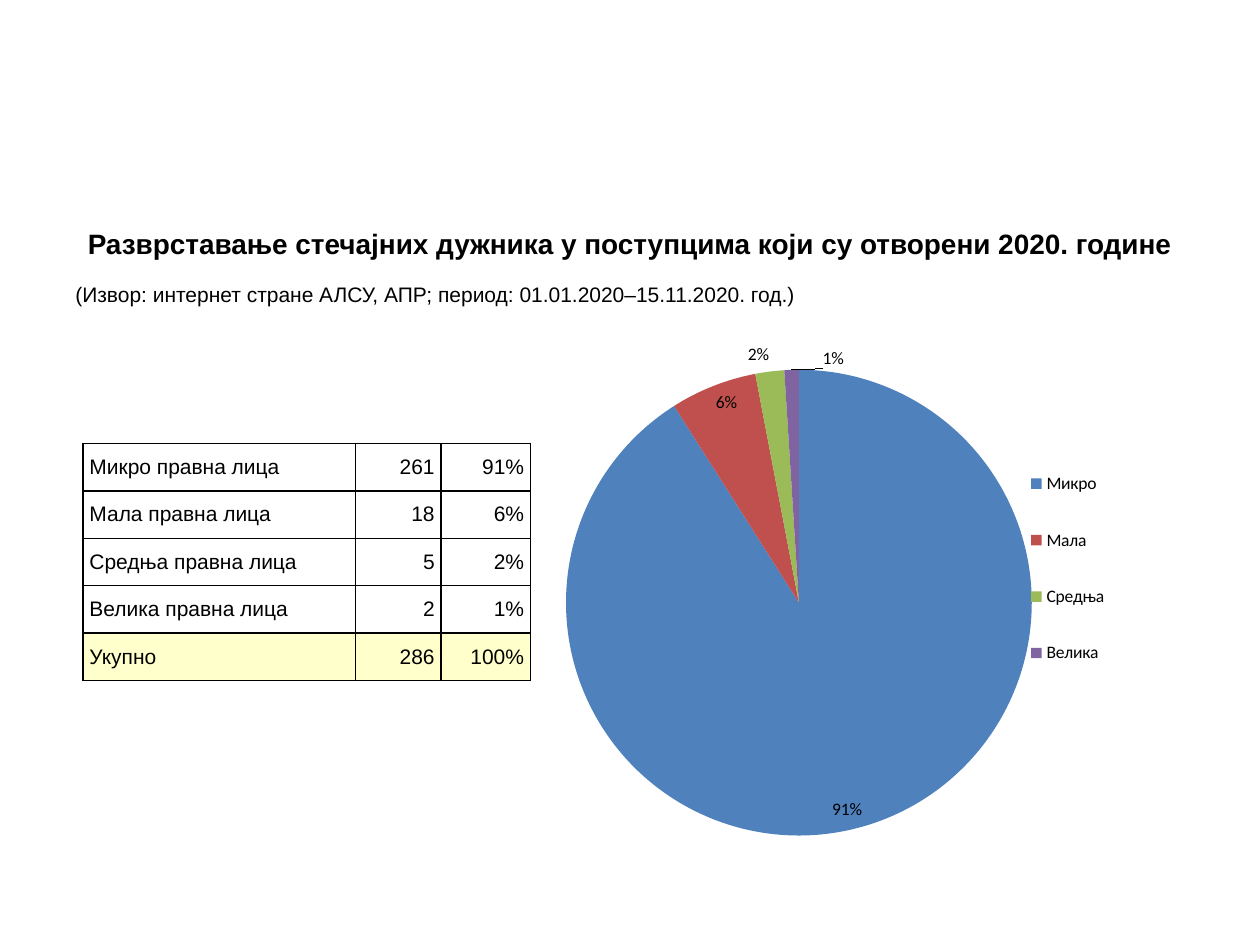
from lxml.etree import SubElement
from pptx import Presentation
from pptx.chart.data import CategoryChartData
from pptx.dml.color import RGBColor
from pptx.enum.chart import XL_CHART_TYPE, XL_LABEL_POSITION, XL_LEGEND_POSITION
from pptx.enum.text import MSO_ANCHOR, PP_ALIGN
from pptx.oxml import parse_xml
from pptx.oxml.ns import nsdecls, qn
from pptx.util import Inches, Pt

COLORS = {
    "ink": "000000", "total": "FFFFCC", "micro": "4F81BD",
    "small": "C0504D", "medium": "9BBB59", "large": "8064A2",
}
COLUMNS, ROWS = 100, 75


def rgb(name):
    return RGBColor.from_string(COLORS[name])


def layout_xml(**values):
    parts = "".join(f'<c:{key} val="{value}"/>' for key, value in values.items())
    return parse_xml(f'<c:layout {nsdecls("c")}><c:manualLayout>{parts}'
                     '</c:manualLayout></c:layout>')


class SlideBuilder:
    """Places elements on a grid of 100 columns by 75 rows."""

    def __init__(self, deck):
        self.deck = deck
        self.page = deck.slides.add_slide(deck.slide_layouts[6])

    def across(self, columns):
        return int(self.deck.slide_width * columns / COLUMNS)

    def down(self, rows):
        return int(self.deck.slide_height * rows / ROWS)

    def place(self, left, top, width, height):
        return self.across(left), self.down(top), self.across(width), self.down(height)

    def style(self, font, size, name="Arial", bold=False):
        for key, value in {"name": name, "size": Pt(size), "bold": bold}.items():
            setattr(font, key, value)
        font.color.rgb = rgb("ink")

    def text(self, area, lines):
        frame = self.page.shapes.add_textbox(*self.place(*area)).text_frame
        frame.word_wrap = True
        for index, (words, size, bold, align, before) in enumerate(lines):
            para = frame.paragraphs[0] if index == 0 else frame.add_paragraph()
            para.alignment = align
            para.space_before = Pt(before)
            span = para.add_run()
            span.text = words
            self.style(span.font, size, bold=bold)

    def borders(self, cell):
        properties = cell._tc.get_or_add_tcPr()
        for index, side in enumerate(("lnL", "lnR", "lnT", "lnB")):
            properties.insert(index, parse_xml(
                f'<a:{side} {nsdecls("a")} w="{Pt(1)}"><a:solidFill>'
                f'<a:srgbClr val="{COLORS["ink"]}"/></a:solidFill></a:{side}>'))

    def table(self, area, widths, records):
        table = self.page.shapes.add_table(
            len(records), len(widths), *self.place(*area)).table
        table.first_row = table.horz_banding = False
        for column, width in zip(table.columns, widths):
            column.width = self.across(width)
        margins = {"margin_left": Inches(0.05), "margin_right": Inches(0.05),
                   "margin_top": Inches(0.06), "margin_bottom": Inches(0.06),
                   "vertical_anchor": MSO_ANCHOR.MIDDLE}
        for row, record in enumerate(records):
            for column, words in enumerate(record):
                cell = table.cell(row, column)
                for key, value in margins.items():
                    setattr(cell, key, value)
                if row == len(records) - 1:
                    cell.fill.solid()
                    cell.fill.fore_color.rgb = rgb("total")
                else:
                    cell.fill.background()
                self.borders(cell)
                para = cell.text_frame.paragraphs[0]
                para.alignment = PP_ALIGN.RIGHT if column else PP_ALIGN.LEFT
                span = para.add_run()
                span.text = words
                self.style(span.font, 12)

    def pie(self, area, slices, plot_layout, legend_layout, last_label_shift):
        data = CategoryChartData()
        data.categories = [name for name, *_ in slices]
        data.add_series("Series 1", [value for _, value, *_ in slices])
        chart = self.page.shapes.add_chart(
            XL_CHART_TYPE.PIE, *self.place(*area), data).chart
        self.style(chart.font, 10, name="Calibri")
        chart.has_title = False
        chart.has_legend = True
        chart.legend.position = XL_LEGEND_POSITION.RIGHT
        chart.legend.include_in_layout = False

        # Percent labels and slice colours
        series = chart.plots[0].series[0]
        labels = series.data_labels
        formats = {"show_percentage": True, "show_value": False,
                   "number_format": "0%", "number_format_is_linked": False}
        for key, value in formats.items():
            setattr(labels, key, value)
        for index, (_, _, color, position) in enumerate(slices):
            point = series.points[index]
            point.format.fill.solid()
            point.format.fill.fore_color.rgb = rgb(color)
            point.data_label.position = position
        marks = series._element.findall(".//" + qn("c:dLbl"))
        for mark in marks:
            mark.find(qn("c:showVal")).set("val", "0")
            mark.find(qn("c:showPercent")).set("val", "1")
        marks[-1].insert(1, layout_xml(**last_label_shift))

        # Fixed places for the pie and its legend
        plot_area = chart._chartSpace.chart.plotArea
        legend = chart.legend._element
        for parent, layout in ((plot_area, plot_layout), (legend, legend_layout)):
            for old in parent.findall(qn("c:layout")):
                parent.remove(old)
            fixed = layout_xml(**layout)
            if parent is legend:
                parent.find(qn("c:legendPos")).addnext(fixed)
            else:
                SubElement(fixed[0], qn("c:layoutTarget")).set("val", "inner")
                fixed[0].insert(0, fixed[0][-1])
                parent.insert(0, fixed)


def main():
    deck = Presentation()
    deck.slide_width, deck.slide_height = Inches(10), Inches(7.5)
    slide = SlideBuilder(deck)

    # Heading and source
    slide.text((5, 17.5, 90, 7.4), [
        ("Разврставање стечајних дужника у поступцима који су отворени 2020. године",
         16, True, PP_ALIGN.CENTER, 0),
        ("(Извор: интернет стране АЛСУ, АПР; период: 01.01.2020–15.11.2020. год.)",
         12, False, PP_ALIGN.LEFT, 12),
    ])

    # Share of each size class
    inside, outside = XL_LABEL_POSITION.INSIDE_END, XL_LABEL_POSITION.OUTSIDE_END
    edges = {"xMode": "edge", "yMode": "edge"}
    slide.pie(
        (43.5, 21.8, 47.4, 49.6),
        [("Микро", 91, "micro", inside), ("Мала", 6, "small", inside),
         ("Средња", 2, "medium", outside), ("Велика", 1, "large", outside)],
        plot_layout={**edges, "x": 0.03, "y": 0.15, "w": 0.78, "h": 0.75},
        legend_layout={**edges, "x": 0.79, "y": 0.26, "w": 0.16, "h": 0.42},
        last_label_shift={"x": 0.07, "y": 0.01},
    )

    # Counts by size class
    slide.table((6.6, 35.2, 35.5, 18.8), (21.6, 6.8, 7.1), [
        ("Микро правна лица", "261", "91%"),
        ("Мала правна лица", "18", "6%"),
        ("Средња правна лица", "5", "2%"),
        ("Велика правна лица", "2", "1%"),
        ("Укупно", "286", "100%"),
    ])
    deck.save("out.pptx")


if __name__ == "__main__":
    main()
